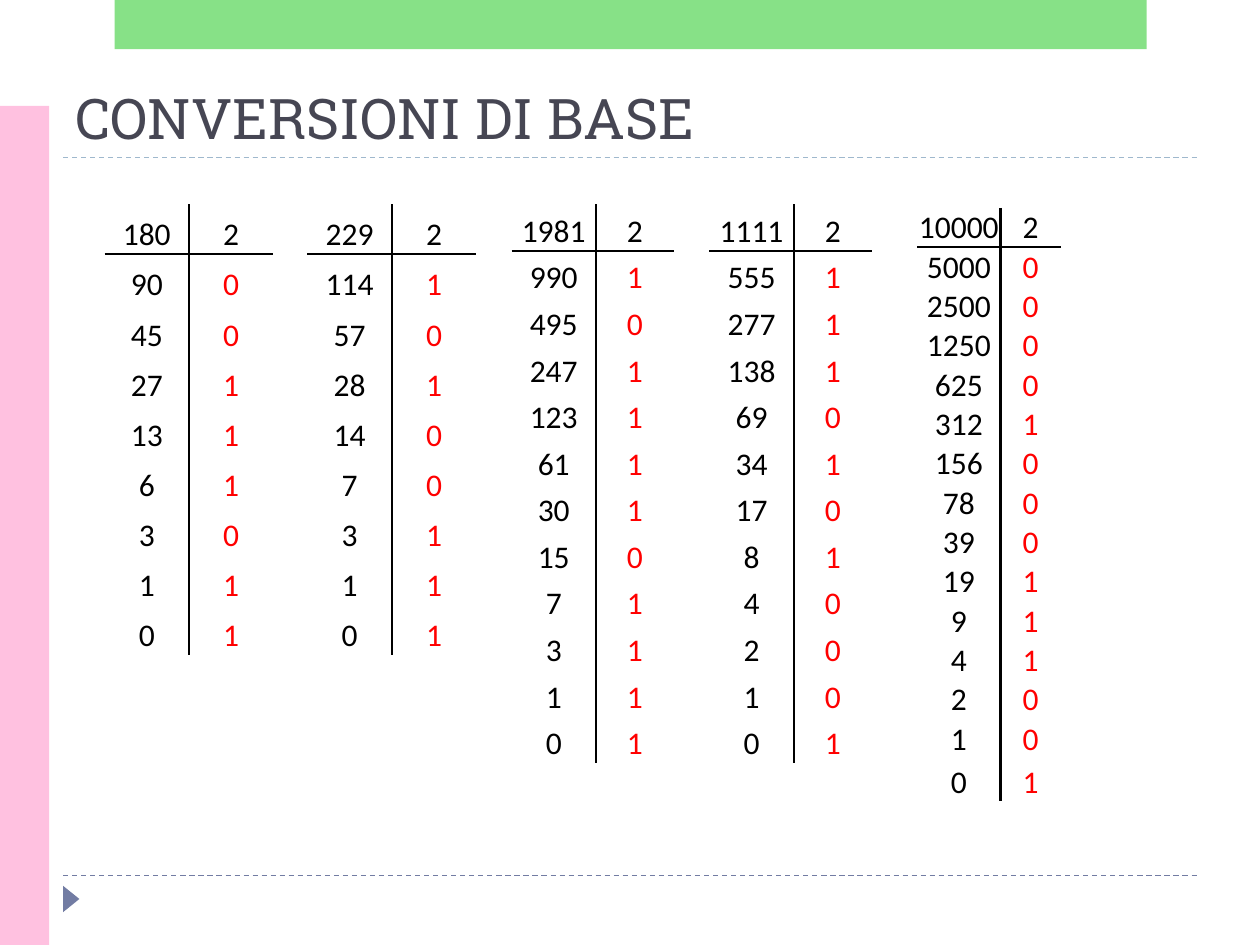
from lxml import etree
from pptx import Presentation
from pptx import util as u
from pptx.dml.color import RGBColor
from pptx.enum import dml, shapes, text
from pptx.oxml.ns import qn

TITLE = "CONVERSIONI DI BASE"
BASE = "2"
COLORS = {"title": "464653", "accent": "727CA3", "rule": "9FB8CD", "pink": "FFC1E0",
          "green": "62D862", "number": "000000", "digit": "FF0000"}
NO_STYLE = "{2D5ABB26-0587-4C30-8999-92F81FD0307C}"

# left, top, column widths, height, last row height (None: same as the others),
# successive quotients, remainders
DIVISIONS = [
    (0.83, 1.62, (0.67, 0.67), 3.58, None, "180 90 45 27 13 6 3 1 0", "00111011"),
    (2.44, 1.62, (0.67, 0.67), 3.58, None, "229 114 57 28 14 7 3 1 0", "10100111"),
    (4.06, 1.62, (0.67, 0.62), 4.44, None,
     "1981 990 495 247 123 61 30 15 7 3 1 0", "10111101111"),
    (5.63, 1.62, (0.67, 0.62), 4.44, None,
     "1111 555 277 138 69 34 17 8 4 2 1 0", "11101010001"),
    (7.28, 1.65, (0.66, 0.48), 4.62, 0.34,
     "10000 5000 2500 1250 625 312 156 78 39 19 9 4 2 1 0", "00001000111001"),
]


def color(name):
    return RGBColor.from_string(COLORS[name])


def add_rule(slide, y, name):
    rule = slide.shapes.add_connector(
        shapes.MSO_CONNECTOR.STRAIGHT, u.Inches(0.5), u.Inches(y), u.Inches(9.5), u.Inches(y))
    rule.line.color.rgb = color(name)
    rule.line.width = u.Pt(0.75)
    rule.line.dash_style = dml.MSO_LINE.DASH
    etree.SubElement(rule._element.spPr, qn("a:effectLst"))


def add_block(slide, kind, place, name, alpha=None):
    block = slide.shapes.add_shape(kind, *map(u.Inches, place))
    block.shadow.inherit = False
    block.fill.solid()
    block.fill.fore_color.rgb = color(name)
    block.line.fill.background()
    if alpha:
        tint = block._element.spPr.find(".//" + qn("a:srgbClr"))
        etree.SubElement(tint, qn("a:alpha"), val=str(alpha * 1000))
    return block


def set_borders(cell, drawn):
    """Draw the named sides and switch the other ones off."""
    properties = cell._tc.get_or_add_tcPr()
    for side in "LRTB":
        line = etree.SubElement(properties, qn("a:ln" + side), w=str(u.Pt(1.5)))
        if side in drawn:
            fill = etree.SubElement(line, qn("a:solidFill"))
            etree.SubElement(fill, qn("a:srgbClr"), val=COLORS["number"])
        else:
            etree.SubElement(line, qn("a:noFill"))


def write_cell(cell, value, name):
    cell.vertical_anchor = text.MSO_ANCHOR.BOTTOM
    cell.margin_left = cell.margin_right = cell.margin_top = u.Pt(0.5)
    cell.margin_bottom = 0
    para = cell.text_frame.paragraphs[0]
    para.alignment = text.PP_ALIGN.CENTER
    span = para.add_run()
    span.text = value
    span.font.name = "Calibri"
    span.font.size = u.Pt(18)
    span.font.color.rgb = color(name)


def add_division(slide, left, top, widths, height, last, quotients, remainders):
    rows = list(zip(quotients.split(), [BASE, *remainders]))
    frame = slide.shapes.add_table(
        len(rows), 2, *map(u.Inches, (left, top, sum(widths), height)))
    table = frame.table
    table.first_row = table.horz_banding = False
    table._tbl.tblPr.find(qn("a:tableStyleId")).text = NO_STYLE
    for column, width in zip(table.columns, widths):
        column.width = u.Inches(width)
    step = (height - last) / (len(rows) - 1) if last else height / len(rows)
    for r, values in enumerate(rows):
        table.rows[r].height = u.Inches(step)
        across = {0: "B", 1: "T"}.get(r, "")
        for c, value in enumerate(values):
            cell = table.cell(r, c)
            write_cell(cell, value, "digit" if r and c else "number")
            set_borders(cell, "RL"[c] + across)
            cell.fill.background()
    if last:
        table.rows[len(rows) - 1].height = u.Inches(last)


def add_title(slide):
    title = slide.shapes.title
    title.left, title.top, title.width, title.height = map(u.Inches, (0.5, 0.55, 9, 0.7))
    title.text_frame.vertical_anchor = text.MSO_ANCHOR.BOTTOM
    para = title.text_frame.paragraphs[0]
    para.alignment = text.PP_ALIGN.LEFT
    span = para.add_run()
    span.text = TITLE
    span.font.name = "Roboto Slab"
    span.font.size = u.Pt(32)
    span.font.color.rgb = color("title")


def main():
    deck = Presentation()
    deck.slide_width, deck.slide_height = u.Inches(10), u.Inches(7.5)
    slide = deck.slides.add_slide(deck.slide_layouts[5])
    add_rule(slide, 6.95, "accent")
    add_rule(slide, 1.25, "rule")
    kinds = shapes.MSO_SHAPE
    marker = add_block(slide, kinds.ISOSCELES_TRIANGLE, (0.46, 7.07, 0.21, 0.13), "accent")
    marker.rotation = 90
    add_block(slide, kinds.RECTANGLE, (0, 0.84, 0.39, 6.66), "pink")
    add_block(slide, kinds.RECTANGLE, (0.91, 0, 8.19, 0.39), "green", alpha=76)
    add_title(slide)
    for division in DIVISIONS:
        add_division(slide, *division)
    deck.save("out.pptx")


if __name__ == "__main__":
    main()
